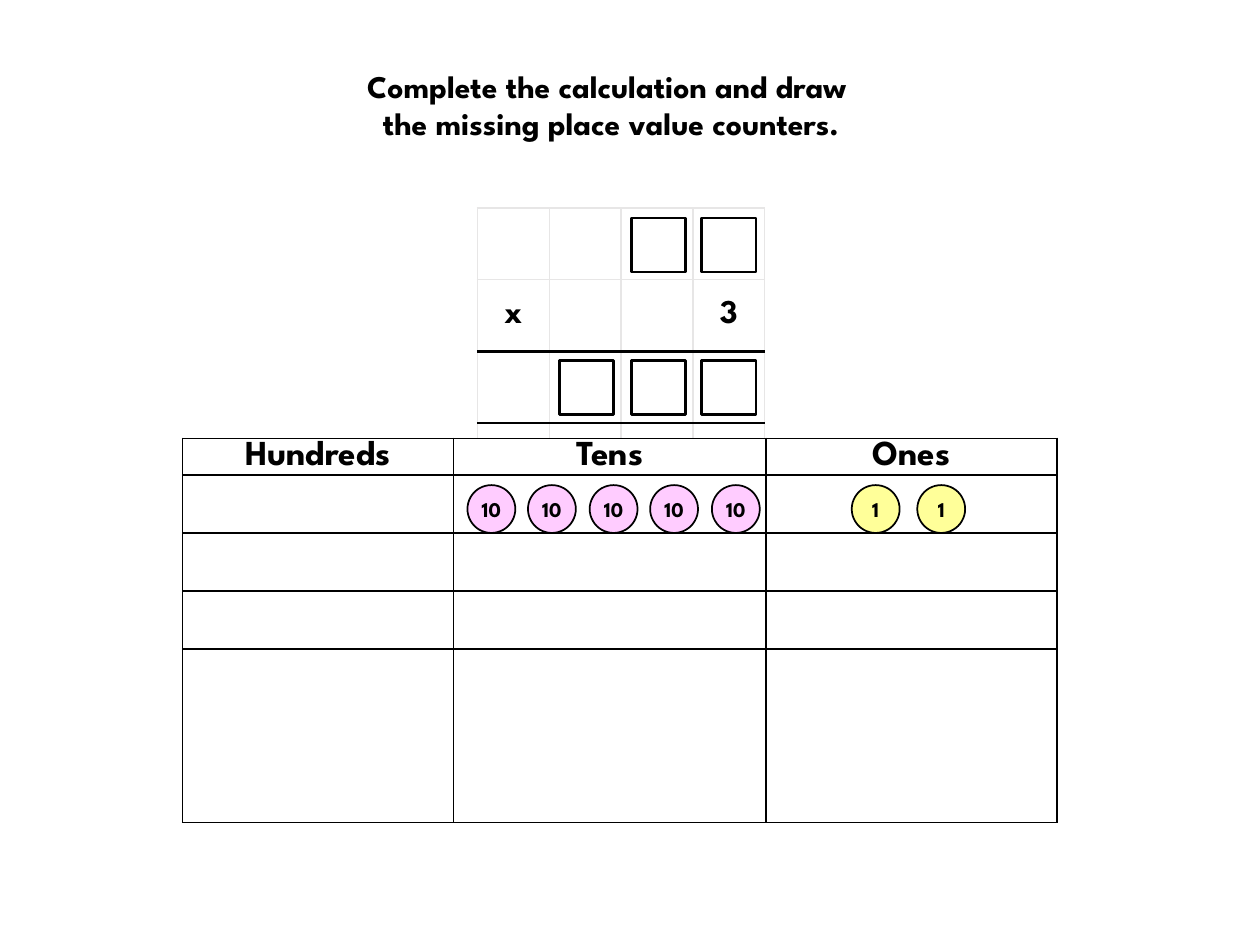
from lxml import etree
from pptx import Presentation
from pptx.dml.color import RGBColor
from pptx.enum.shapes import MSO_SHAPE
from pptx.enum.text import MSO_ANCHOR, PP_ALIGN
from pptx.oxml.ns import qn
from pptx.util import Emu, Pt

RECTANGLE, OVAL = MSO_SHAPE.RECTANGLE, MSO_SHAPE.OVAL
MIDDLE, CENTER = MSO_ANCHOR.MIDDLE, PP_ALIGN.CENTER

BLACK = RGBColor(0x00, 0x00, 0x00)
WHITE = RGBColor(0xFF, 0xFF, 0xFF)
GRAY = RGBColor(0xE7, 0xE6, 0xE6)
YELLOW = RGBColor(0xFF, 0xFF, 0x99)
PINK = RGBColor(0xFF, 0xCC, 0xFF)

EMU_PER_PX = 9144
THIN, THICK = (BLACK, 1), (BLACK, 1.5)
PALE = (GRAY, 1)


def px(*lengths):
    return [Emu(length * EMU_PER_PX) for length in lengths]


class Worksheet:
    font = "League Spartan"

    def __init__(self, deck):
        self.page = deck.slides.add_slide(deck.slide_layouts[6])

    def add_text(self, frame, lines, size):
        frame.word_wrap = True
        for index, line in enumerate(lines):
            para = frame.add_paragraph() if index else frame.paragraphs[0]
            para.alignment = CENTER
            span = para.add_run()
            span.text = line
            span.font.color.rgb = BLACK
            looks = {"name": self.font, "size": Pt(size), "bold": True}
            for name, value in looks.items():
                setattr(span.font, name, value)

    def center_in(self, holder, across, down):
        holder.vertical_anchor = MIDDLE
        across, down = px(across, down)
        margins = {"left": across, "right": across, "top": down, "bottom": down}
        for side, length in margins.items():
            setattr(holder, f"margin_{side}", length)

    def heading(self, box, lines, size):
        self.add_text(self.page.shapes.add_textbox(*px(*box)).text_frame, lines, size)

    def fill(self, target, color):
        if color is None:
            target.fill.background()
        else:
            target.fill.solid()
            target.fill.fore_color.rgb = color

    def shape(self, kind, box, width, color=None, label=None):
        shape = self.page.shapes.add_shape(kind, *px(*box))
        shape.shadow.inherit = False
        shape.line.color.rgb = BLACK
        shape.line.width = Pt(width)
        self.fill(shape, color)
        if label:
            self.center_in(shape.text_frame, 0, 0)
            self.add_text(shape.text_frame, [label], 12)

    def border(self, cell, side, style):
        properties = cell._tc.get_or_add_tcPr()
        line = etree.SubElement(properties, qn(f"a:ln{side}"))
        if style is None:
            etree.SubElement(line, qn("a:noFill"))
            return
        color, width = style
        line.set("w", str(Pt(width)))
        fill = etree.SubElement(line, qn("a:solidFill"))
        etree.SubElement(fill, qn("a:srgbClr"), val=str(color))

    def table(self, corner, columns, rows, texts, size, insets, borders, filled):
        box = px(*corner, sum(columns), sum(rows))
        table = self.page.shapes.add_table(len(rows), len(columns), *box).table
        table.first_row = table.horz_banding = False
        for column, width in zip(table.columns, px(*columns)):
            column.width = width
        for row, height in zip(table.rows, px(*rows)):
            row.height = height
        for r in range(len(rows)):
            for c in range(len(columns)):
                cell = table.cell(r, c)
                for side, style in zip("LRTB", borders(r, c)):
                    self.border(cell, side, style)
                self.fill(cell, WHITE if filled(r, c) else None)
                if (r, c) in texts:
                    self.center_in(cell, *insets)
                    self.add_text(cell.text_frame, [texts[r, c]], size)


def grid_borders(row, column):
    rules = [PALE, PALE, THICK, THICK, PALE, None]
    upright = PALE if row < 4 else None
    if column == 4:
        return upright, None, None, None
    return upright, upright, rules[row], rules[row + 1]


def main():
    deck = Presentation()
    deck.slide_width, deck.slide_height = px(1000, 750)
    sheet = Worksheet(deck)

    sheet.table((379, 165), [57] * 5, [57] * 5, {(1, 0): "x", (1, 3): "3"}, 19,
                (13, 7), grid_borders, lambda r, c: r < 3 and c < 4)

    for top, lefts in ((173, (501, 557)), (286, (444, 501, 557))):
        for left in lefts:
            sheet.shape(RECTANGLE, (left, top, 43, 43), 1.5)

    headers = {(0, c): name for c, name in enumerate(("Hundreds", "Tens", "Ones"))}
    sheet.table((145, 348), [215, 248, 231], [29, 46, 46, 46, 138], headers, 20,
                (0, 0), lambda r, c: [THIN] * 4, lambda r, c: True)

    tens = [371 + i * 97 // 2 for i in range(5)]
    for label, color, lefts in (("1", YELLOW, (676, 728)), ("10", PINK, tens)):
        for left in lefts:
            sheet.shape(OVAL, (left, 385, 38, 38), 1, color, label)

    sheet.heading((74, 48, 822, 71), ["Complete the calculation and draw ",
                                      "the missing place value counters."], 18)
    deck.save("out.pptx")


if __name__ == "__main__":
    main()
